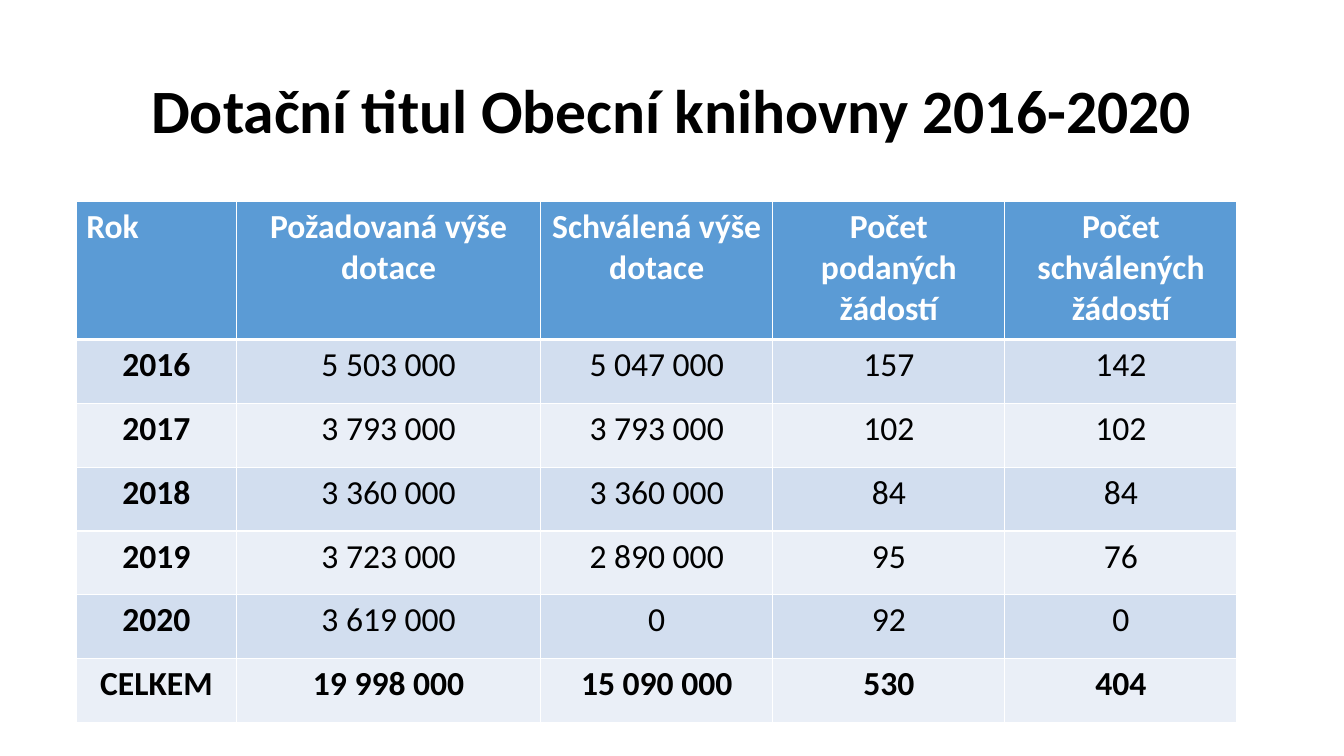
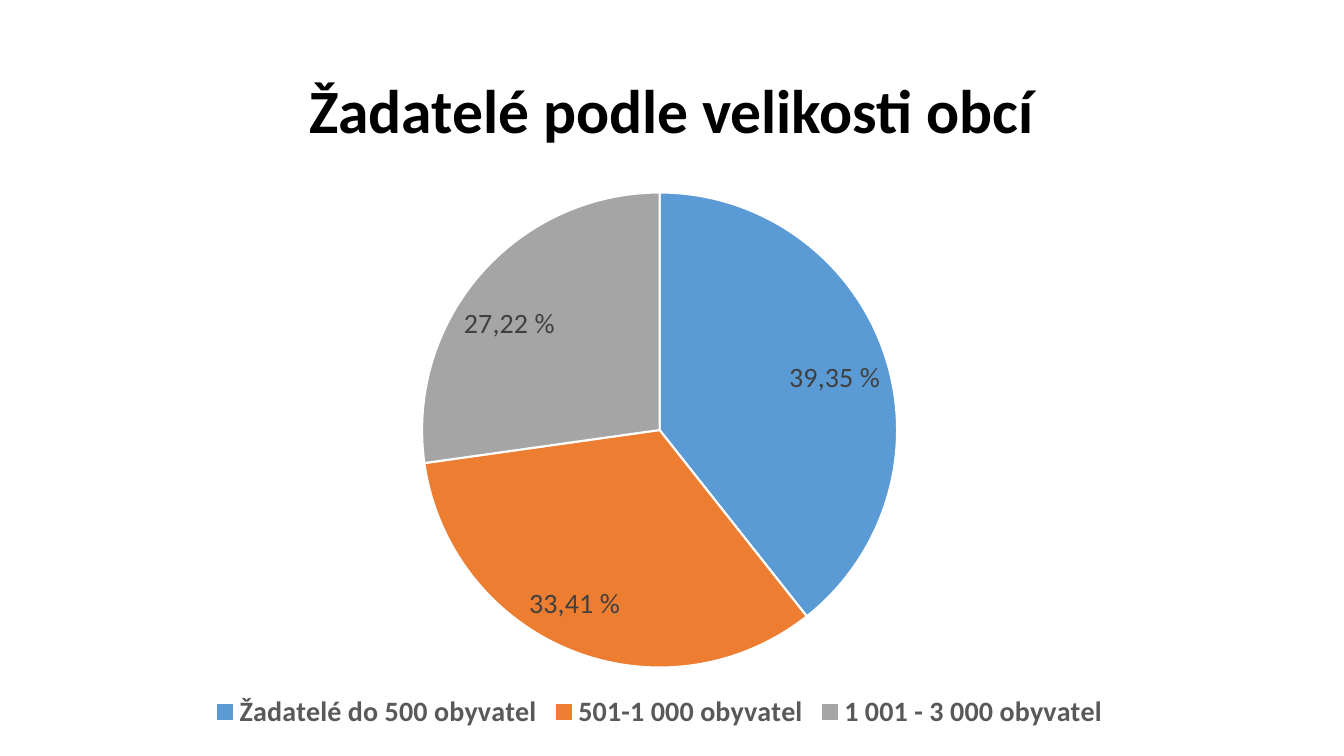
from dataclasses import dataclass

from pptx import Presentation
from pptx import util as u
from pptx.chart.data import CategoryChartData
from pptx.dml.color import RGBColor
from pptx.enum import chart as charts
from pptx.enum import text
from pptx.oxml import parse_xml
from pptx.oxml.ns import nsdecls

FONT = "Calibri"
COLORS = {
    "text": "000000",
    "white": "FFFFFF",
    "blue": "5B9BD5",
    "orange": "ED7D31",
    "gray": "A5A5A5",
    "band_dark": "D2DEEF",
    "band_light": "EAEFF7",
    "legend": "595959",
    "label": "404040",
}


@dataclass(frozen=True)
class Box:
    left: float
    top: float
    width: float
    height: float

    def lengths(self) -> tuple:
        return tuple(u.Pt(n) for n in (self.left, self.top, self.width, self.height))


@dataclass(frozen=True)
class Sector:
    category: str
    value: float
    label: str
    color: str


TITLE_BOX = Box(66, 28.8, 828, 104.4)
TABLE_BOX = Box(54.5, 144, 829.2, 372.2)
CHART_BOX = Box(48.5, 127.6, 845.3, 397.2)

COLUMN_WIDTHS = [114.5, 217.2, 165.8, 165.8, 165.8]
HEADER_HEIGHT = 98.6
ROW_HEIGHT = 45.6
GRANT_ROWS = [
    ["Rok", "Požadovaná výše dotace", "Schválená výše dotace",
     "Počet podaných žádostí", "Počet schválených žádostí"],
    ["2016", "5 503 000", "5 047 000", "157", "142"],
    ["2017", "3 793 000", "3 793 000", "102", "102"],
    ["2018", "3 360 000", "3 360 000", "84", "84"],
    ["2019", "3 723 000", "2 890 000", "95", "76"],
    ["2020", "3 619 000", "0", "92", "0"],
    ["CELKEM", "19 998 000", "15 090 000", "530", "404"],
]
SECTORS = [
    Sector("Žadatelé do 500 obyvatel", 39.35, "39,35 %", "blue"),
    Sector("501-1 000 obyvatel", 33.41, "33,41 %", "orange"),
    Sector("1 001 - 3 000 obyvatel", 27.22, "27,22 %", "gray"),
]


def rgb(name: str) -> RGBColor:
    return RGBColor.from_string(COLORS[name])


def style_font(font, size: float, color: str, bold: bool = False) -> None:
    font.name = FONT
    font.size = u.Pt(size)
    font.bold = bold
    font.color.rgb = rgb(color)


def add_titled_slide(presentation, title: str):
    slide = presentation.slides.add_slide(presentation.slide_layouts[5])
    shape = slide.shapes.title
    shape.left, shape.top, shape.width, shape.height = TITLE_BOX.lengths()
    frame = shape.text_frame
    frame.text = title
    frame.word_wrap = True
    frame.auto_size = text.MSO_AUTO_SIZE.NONE
    frame.vertical_anchor = text.MSO_ANCHOR.MIDDLE
    paragraph = frame.paragraphs[0]
    paragraph.alignment = text.PP_ALIGN.CENTER
    paragraph.line_spacing = 0.9
    style_font(paragraph.font, 44, "text", bold=True)
    return slide


def set_borders(cell, top: float, bottom: float) -> None:
    properties = cell._tc.get_or_add_tcPr()
    widths = {"lnL": 1, "lnR": 1, "lnT": top, "lnB": bottom}
    for index, (tag, width) in enumerate(widths.items()):
        properties.insert(index, parse_xml(
            f'<a:{tag} {nsdecls("a")} w="{u.Pt(width)}"><a:solidFill>'
            f'<a:srgbClr val="{COLORS["white"]}"/></a:solidFill></a:{tag}>'))


def add_grant_table(slide) -> None:
    last_row = len(GRANT_ROWS) - 1
    table = slide.shapes.add_table(
        len(GRANT_ROWS), len(COLUMN_WIDTHS), *TABLE_BOX.lengths()).table
    table.first_row = table.horz_banding = False
    for column, width in zip(table.columns, COLUMN_WIDTHS):
        column.width = u.Pt(width)

    for r, values in enumerate(GRANT_ROWS):
        header = r == 0
        table.rows[r].height = u.Pt(HEADER_HEIGHT if header else ROW_HEIGHT)
        fill = "blue" if header else "band_dark" if r % 2 else "band_light"
        for c, value in enumerate(values):
            cell = table.cell(r, c)
            cell.text = value
            cell.fill.solid()
            cell.fill.fore_color.rgb = rgb(fill)
            set_borders(cell, top=3 if r == 1 else 1, bottom=3 if header else 1)
            paragraph = cell.text_frame.paragraphs[0]
            left_aligned = header and c == 0
            paragraph.alignment = (
                text.PP_ALIGN.LEFT if left_aligned else text.PP_ALIGN.CENTER)
            style_font(paragraph.font, 24, "white" if header else "text",
                       bold=c == 0 or r in (0, last_row))


def add_applicant_chart(slide) -> None:
    data = CategoryChartData(number_format="0.00")
    data.categories = [sector.category for sector in SECTORS]
    data.add_series("Series 1", [sector.value for sector in SECTORS])
    chart = slide.shapes.add_chart(
        charts.XL_CHART_TYPE.PIE, *CHART_BOX.lengths(), data).chart
    chart.has_title = False
    style_font(chart.font, 10, "text")

    # Legend
    chart.has_legend = True
    chart.legend.position = charts.XL_LEGEND_POSITION.BOTTOM
    chart.legend.include_in_layout = False
    style_font(chart.legend.font, 20, "legend", bold=True)

    # Sectors and their labels
    plot = chart.plots[0]
    plot.vary_by_categories = True
    series = plot.series[0]
    series.data_labels.show_value = True
    series.data_labels.position = charts.XL_LABEL_POSITION.BEST_FIT
    style_font(series.data_labels.font, 20, "label", bold=True)
    for index, sector in enumerate(SECTORS):
        point = series.points[index]
        point.format.fill.solid()
        point.format.fill.fore_color.rgb = rgb(sector.color)
        point.format.line.color.rgb = rgb("white")
        point.format.line.width = u.Pt(1.5)
        label = point.data_label
        label.position = charts.XL_LABEL_POSITION.BEST_FIT
        run = label.text_frame.paragraphs[0].add_run()
        run.text = sector.label
        style_font(run.font, 20, "label")


def main() -> None:
    presentation = Presentation()
    presentation.slide_width = u.Pt(960)
    presentation.slide_height = u.Pt(540)

    # Grants by year
    add_grant_table(add_titled_slide(
        presentation, "Dotační titul Obecní knihovny 2016-2020"))

    # Applicants by size of municipality
    add_applicant_chart(add_titled_slide(
        presentation, "Žadatelé podle velikosti obcí"))

    presentation.save("out.pptx")


if __name__ == "__main__":
    main()
